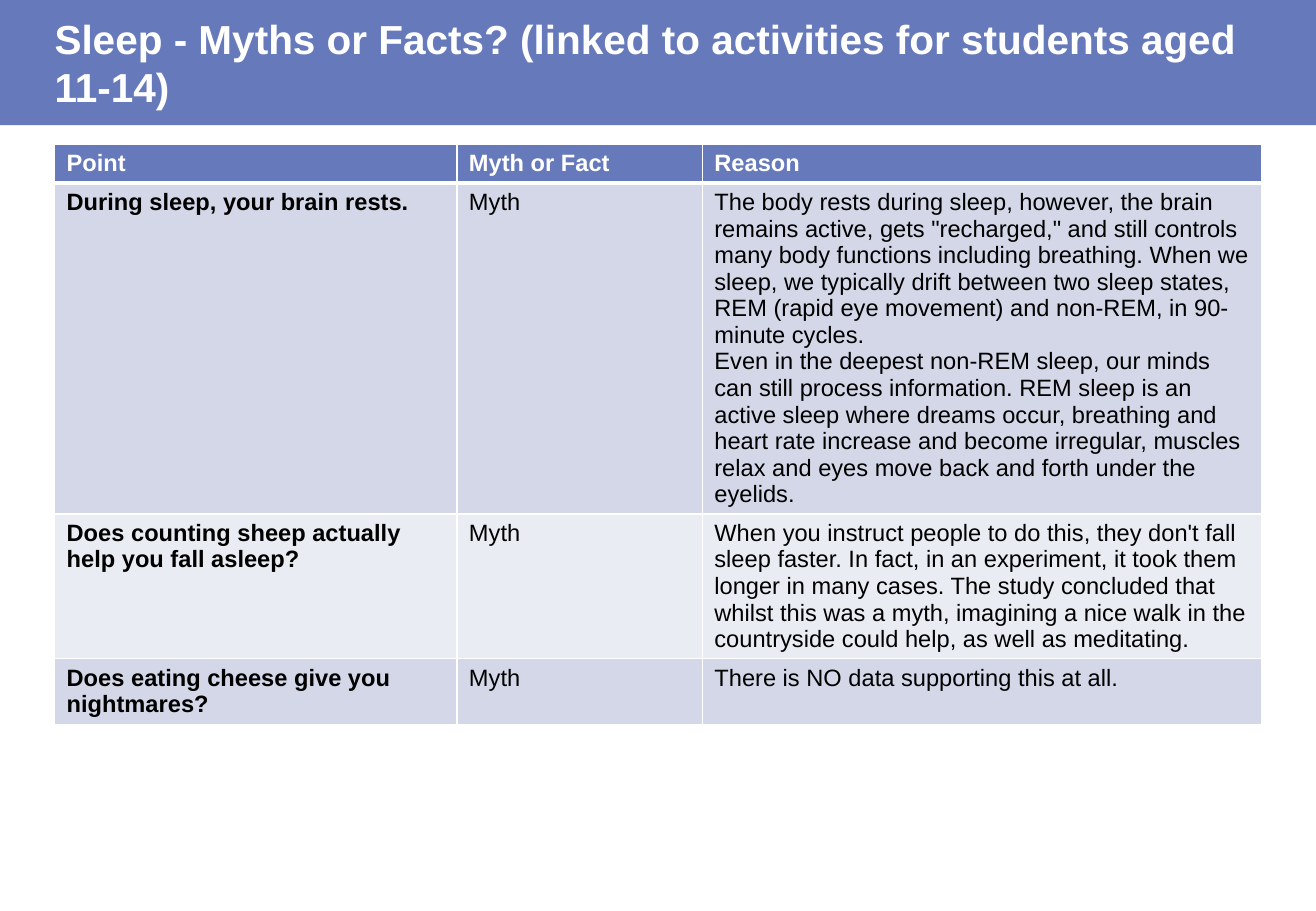
from dataclasses import dataclass

from lxml.etree import SubElement
from pptx import Presentation
from pptx.dml.color import RGBColor
from pptx.enum.shapes import MSO_SHAPE
from pptx.enum.text import MSO_ANCHOR, MSO_AUTO_SIZE, PP_ALIGN
from pptx.oxml.ns import qn
from pptx.slide import Slide
from pptx.table import _Cell
from pptx.text.text import TextFrame
from pptx.util import Cm, Pt


@dataclass(frozen=True)
class Theme:
    font: str = "Arial"
    title_size: int = 24
    body_size: int = 14
    blue: str = "6679BA"
    bands: tuple[str, str] = ("D3D7E7", "EAECF3")
    white: str = "FFFFFF"
    black: str = "000000"
    border: float = 1
    header_border: float = 3


@dataclass(frozen=True)
class Claim:
    point: str
    verdict: str
    reasons: tuple[str, ...]
    height: float


THEME = Theme()
SLIDE_W, SLIDE_H = 27.51, 19.05
LEFT, CONTENT_W = 1.14, 25.24
BAND_H = 2.62
TABLE_TOP, HEADER_H = 3.02, 0.78
COLUMNS = {"Point": 8.41, "Myth or Fact": 5.13, "Reason": 11.7}
CLAIMS = [
    Claim("During sleep, your brain rests.", "Myth", (
        "The body rests during sleep, however, the brain remains active, gets "
        "\"recharged,\" and still controls many body functions including breathing. "
        "When we sleep, we typically drift between two sleep states, REM (rapid eye "
        "movement) and non-REM, in 90-minute cycles.",
        "Even in the deepest non-REM sleep, our minds can still process information. "
        "REM sleep is an active sleep where dreams occur, breathing and heart rate "
        "increase and become irregular, muscles relax and eyes move back and forth "
        "under the eyelids."), 6.91),
    Claim("Does counting sheep actually help you fall asleep?", "Myth", (
        "When you instruct people to do this, they don't fall sleep faster. In fact, "
        "in an experiment, it took them longer in many cases. The study concluded that "
        "whilst this was a myth, imagining a nice walk in the countryside could help, "
        "as well as meditating.",), 3.02),
    Claim("Does eating cheese give you nightmares?", "Myth",
          ("There is NO data supporting this at all.",), 1.37),
]


def write_text(tf: TextFrame, *paragraphs: str, size: int, color: str, bold: bool = False) -> None:
    for i, text in enumerate(paragraphs):
        p = tf.add_paragraph() if i else tf.paragraphs[0]
        p.alignment = PP_ALIGN.LEFT
        r = p.add_run()
        r.text = text
        r.font.name = THEME.font
        r.font.size = Pt(size)
        r.font.bold = bold
        r.font.color.rgb = RGBColor.from_string(color)


def add_borders(cell: _Cell, bottom: float) -> None:
    tc_pr = cell._tc.get_or_add_tcPr()
    widths = {"a:lnL": THEME.border, "a:lnR": THEME.border, "a:lnT": THEME.border, "a:lnB": bottom}
    for tag, width in widths.items():
        ln = SubElement(tc_pr, qn(tag), w=str(Pt(width)))
        fill = SubElement(ln, qn("a:solidFill"))
        SubElement(fill, qn("a:srgbClr"), val=THEME.white)


def fill_cell(cell: _Cell, *paragraphs: str, fill: str, color: str = THEME.black,
              bold: bool = False, bottom: float = THEME.border) -> None:
    add_borders(cell, bottom)
    cell.fill.solid()
    cell.fill.fore_color.rgb = RGBColor.from_string(fill)
    write_text(cell.text_frame, *paragraphs, size=THEME.body_size, color=color, bold=bold)


def add_title(s: Slide, text: str) -> None:
    """Fill the title placeholder and lay the blue band behind it."""
    title = s.shapes.title
    title.left, title.top, title.width, title.height = Cm(LEFT), Cm(0.3), Cm(CONTENT_W), Cm(2)
    tf = title.text_frame
    tf.margin_left = tf.margin_top = tf.margin_right = tf.margin_bottom = 0
    tf.vertical_anchor = MSO_ANCHOR.MIDDLE
    tf.word_wrap = True
    tf.auto_size = MSO_AUTO_SIZE.NONE
    write_text(tf, text, size=THEME.title_size, color=THEME.white, bold=True)

    band = s.shapes.add_shape(MSO_SHAPE.RECTANGLE, 0, 0, Cm(SLIDE_W), Cm(BAND_H))
    band.shadow.inherit = False
    band.fill.solid()
    band.fill.fore_color.rgb = RGBColor.from_string(THEME.blue)
    band.line.fill.background()
    title.element.addprevious(band.element)


def add_claims_table(s: Slide, claims: list[Claim]) -> None:
    heights = [HEADER_H, *(claim.height for claim in claims)]
    table = s.shapes.add_table(len(heights), len(COLUMNS), Cm(LEFT), Cm(TABLE_TOP),
                               Cm(CONTENT_W), Cm(sum(heights))).table
    for row, height in zip(table.rows, heights):
        row.height = Cm(height)
    for i, (heading, width) in enumerate(COLUMNS.items()):
        table.columns[i].width = Cm(width)
        fill_cell(table.cell(0, i), heading, fill=THEME.blue, color=THEME.white,
                  bold=True, bottom=THEME.header_border)
    for i, claim in enumerate(claims):
        fill = THEME.bands[i % 2]
        point, verdict, reason = table.rows[i + 1].cells
        fill_cell(point, claim.point, fill=fill, bold=True)
        fill_cell(verdict, claim.verdict, fill=fill)
        fill_cell(reason, *claim.reasons, fill=fill)
    for cell in table.rows[1].cells:
        top = cell._tc.tcPr.find(qn("a:lnT"))
        top.set("w", str(Pt(THEME.header_border)))


def main() -> None:
    prs = Presentation()
    prs.slide_width, prs.slide_height = Cm(SLIDE_W), Cm(SLIDE_H)
    s = prs.slides.add_slide(prs.slide_layouts[5])
    add_title(s, "Sleep - Myths or Facts? (linked to activities for students aged 11-14)")
    add_claims_table(s, CLAIMS)
    prs.save("out.pptx")


if __name__ == "__main__":
    main()
